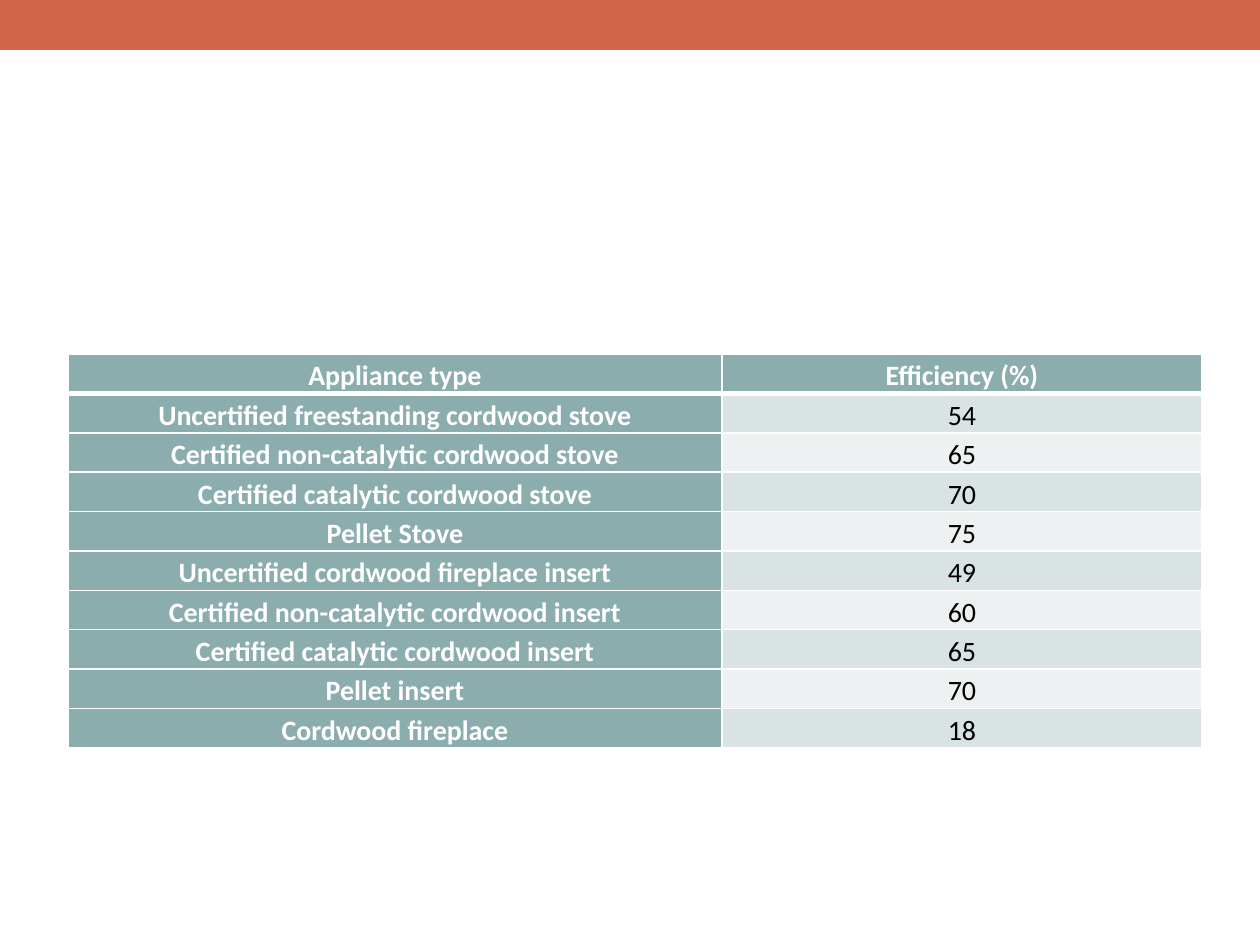
from lxml import etree
from pptx import Presentation
from pptx import util as u
from pptx.dml.color import RGBColor
from pptx.enum import shapes, text
from pptx.oxml.ns import qn

HEADER = ("Appliance type", "Efficiency (%)")
APPLIANCES = [
    ("Uncertified freestanding cordwood stove", 54),
    ("Certified non-catalytic cordwood stove", 65),
    ("Certified catalytic cordwood stove", 70),
    ("Pellet Stove", 75),
    ("Uncertified cordwood fireplace insert", 49),
    ("Certified non-catalytic cordwood insert", 60),
    ("Certified catalytic cordwood insert", 65),
    ("Pellet insert", 70),
    ("Cordwood fireplace", 18),
]

WHITE = RGBColor(0xFF, 0xFF, 0xFF)
BLACK = RGBColor(0x00, 0x00, 0x00)
RUST = RGBColor(0xD1, 0x63, 0x49)
TEAL = RGBColor(0x8C, 0xAD, 0xAE)
BANDS = (RGBColor(0xDA, 0xE3, 0xE3), RGBColor(0xEE, 0xF1, 0xF2))

SLIDE_WIDTH, SLIDE_HEIGHT = 1260, 945
BANNER_HEIGHT = 50
TABLE_LEFT, TABLE_TOP, TABLE_HEIGHT = 68, 354, 387
COLUMN_WIDTHS = (654, 480)
CELL_INSET = 9


def px(count):
    return u.Emu(count * 914400 // 126)


def add_border(cell, side, points):
    properties = cell._tc.get_or_add_tcPr()
    line = etree.SubElement(properties, qn(f"a:ln{side}"), w=str(u.Pt(points)))
    fill = etree.SubElement(line, qn("a:solidFill"))
    etree.SubElement(fill, qn("a:srgbClr"), val=str(WHITE))


def write_cell(cell, content, *, fill, color, bold, top=1, bottom=1):
    """Write centred text; top and bottom are border widths in points."""
    for side, points in (("L", 1), ("R", 1), ("T", top), ("B", bottom)):
        add_border(cell, side, points)
    cell.fill.solid()
    cell.fill.fore_color.rgb = fill
    cell.margin_left = cell.margin_right = px(CELL_INSET)
    cell.margin_top = cell.margin_bottom = 0
    cell.vertical_anchor = text.MSO_ANCHOR.MIDDLE
    para = cell.text_frame.paragraphs[0]
    para.alignment = text.PP_ALIGN.CENTER
    para.line_spacing = 1.15
    span = para.add_run()
    span.text = str(content)
    span.font.name = "Calibri"
    span.font.size = u.Pt(16)
    span.font.bold = bold
    span.font.color.rgb = color


def add_banner(page):
    banner = page.shapes.add_shape(
        shapes.MSO_SHAPE.RECTANGLE, 0, 0, px(SLIDE_WIDTH), px(BANNER_HEIGHT))
    banner.shadow.inherit = False
    banner.fill.solid()
    banner.fill.fore_color.rgb = RUST
    banner.line.fill.background()


def add_efficiency_table(page):
    rows = [HEADER, *APPLIANCES]
    table = page.shapes.add_table(
        len(rows), len(HEADER), px(TABLE_LEFT), px(TABLE_TOP),
        px(sum(COLUMN_WIDTHS)), px(TABLE_HEIGHT)).table
    table.first_col = True
    for column, width in zip(table.columns, COLUMN_WIDTHS):
        column.width = px(width)
    for r, row in enumerate(rows):
        for c, content in enumerate(row):
            heading = r == 0 or c == 0
            write_cell(
                table.cell(r, c), content,
                fill=TEAL if heading else BANDS[(r - 1) % 2],
                color=WHITE if heading else BLACK,
                bold=heading,
                top=3 if r == 1 else 1,
                bottom=3 if r == 0 else 1)


def main():
    deck = Presentation()
    deck.slide_width, deck.slide_height = px(SLIDE_WIDTH), px(SLIDE_HEIGHT)
    page = deck.slides.add_slide(deck.slide_layouts[6])
    add_banner(page)
    add_efficiency_table(page)
    deck.save("out.pptx")


if __name__ == "__main__":
    main()
